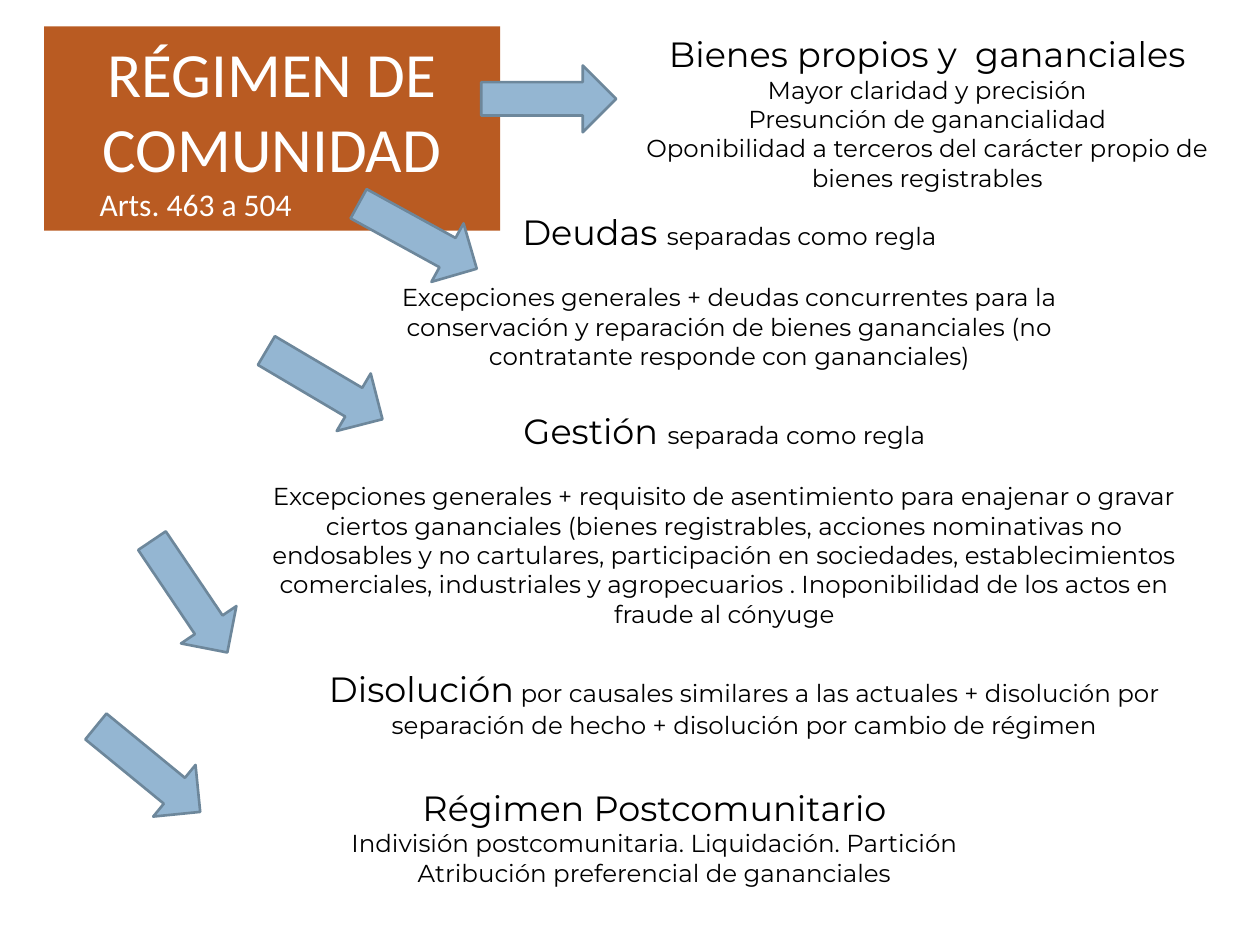
"""Builds a slide on the community property regime."""
from pptx import Presentation
from pptx import util as u
from pptx.dml.color import RGBColor
from pptx.enum import shapes, text

PX = 9144
HUES = {"rust": "B95B22", "sky": "94B6D2", "steel": "6D879B",
        "ink": "000000", "white": "FFFFFF"}
FRAME = {"word_wrap": True, "auto_size": text.MSO_AUTO_SIZE.SHAPE_TO_FIT_TEXT,
         "margin_left": u.Inches(0.1), "margin_right": u.Inches(0.1),
         "margin_top": u.Inches(0.05), "margin_bottom": u.Inches(0.05)}
HEAD, BODY, GAP = 20, 14, 17


def hue(name):
    return RGBColor.from_string(HUES[name])


def put(item, values):
    for key, value in values.items():
        setattr(item, key, value)


class Deck:
    def __init__(self, wide, high):
        self.prs = Presentation()
        put(self.prs, {"slide_width": wide * PX, "slide_height": high * PX})
        self.slide = self.prs.slides.add_slide(self.prs.slide_layouts[5])

    def run(self, para, words, size, face="Montserrat", tint="ink"):
        run = para.add_run()
        run.text = words
        put(run.font, {"name": face, "size": u.Pt(size)})
        run.font.color.rgb = hue(tint)

    def title(self, box, words, note, inset):
        shape = self.slide.shapes.title
        put(shape, dict(zip(("left", "top", "width", "height"),
                            (n * PX for n in box))))
        shape.fill.solid()
        shape.fill.fore_color.rgb = hue("rust")
        frame = shape.text_frame
        put(frame, {**FRAME, "vertical_anchor": text.MSO_ANCHOR.MIDDLE})
        head, sub = frame.paragraphs[0], frame.add_paragraph()
        head.alignment = text.PP_ALIGN.CENTER
        sub.alignment = text.PP_ALIGN.LEFT
        sub._p.get_or_add_pPr().set("marL", str(inset * PX))
        self.run(head, words, 36, "Calibri", "white")
        self.run(sub, note, 18, "Calibri", "white")

    def arrow(self, left, top, turn):
        shape = self.slide.shapes.add_shape(
            shapes.MSO_SHAPE.RIGHT_ARROW, left * PX, top * PX, 107 * PX, 53 * PX)
        shape.rotation = turn
        shape.shadow.inherit = False
        shape.fill.solid()
        shape.fill.fore_color.rgb = hue("sky")
        shape.line.color.rgb = hue("steel")
        shape.line.width = u.Pt(1.5)

    def block(self, box, head, tail="", lines=(), gap=0):
        shape = self.slide.shapes.add_textbox(*(n * PX for n in box))
        frame = shape.text_frame
        put(frame, FRAME)
        para = frame.paragraphs[0]
        self.run(para, head, HEAD)
        if tail:
            self.run(para, tail, BODY)
        for line in lines:
            para = frame.add_paragraph()
            para.space_before = u.Pt(gap)
            self.run(para, line, BODY)
        for para in frame.paragraphs:
            para.alignment = text.PP_ALIGN.CENTER


def main():
    deck = Deck(1000, 750)
    deck.title((35, 21, 362, 162), "RÉGIMEN DE COMUNIDAD", "Arts. 463 a 504", 34)
    for spot in ((382, 52, 0), (278, 161, 28.8), (204, 279, 30.6),
                 (97, 447, 56), (64, 584, 39.3)):
        deck.arrow(*spot)
    deck.block((492, 21, 488, 162), "Bienes propios y  gananciales", lines=(
        "Mayor claridad y precisión",
        "Presunción de ganancialidad",
        "Oponibilidad a terceros del carácter propio de bienes registrables"))
    deck.block((272, 162, 614, 138), "Deudas ", "separadas como regla", (
        "Excepciones generales + deudas concurrentes para la conservación y "
        "reparación de bienes gananciales (no contratante responde con "
        "gananciales)",), GAP)
    deck.block((201, 320, 748, 185), "Gestión ", "separada como regla", (
        "Excepciones generales + requisito de asentimiento para enajenar o "
        "gravar ciertos gananciales (bienes registrables, acciones nominativas "
        "no endosables y no cartulares, participación en sociedades, "
        "establecimientos comerciales, industriales y agropecuarios . "
        "Inoponibilidad de los actos en fraude al cónyuge",), GAP)
    deck.block((201, 525, 780, 67), "Disolución",
               " por causales similares a las actuales + disolución por "
               "separación de hecho + disolución por cambio de régimen")
    deck.block((169, 619, 701, 91), "Régimen Postcomunitario", lines=(
        "Indivisión postcomunitaria. Liquidación. Partición",
        "Atribución preferencial de gananciales"))
    deck.prs.save("out.pptx")


if __name__ == "__main__":
    main()
